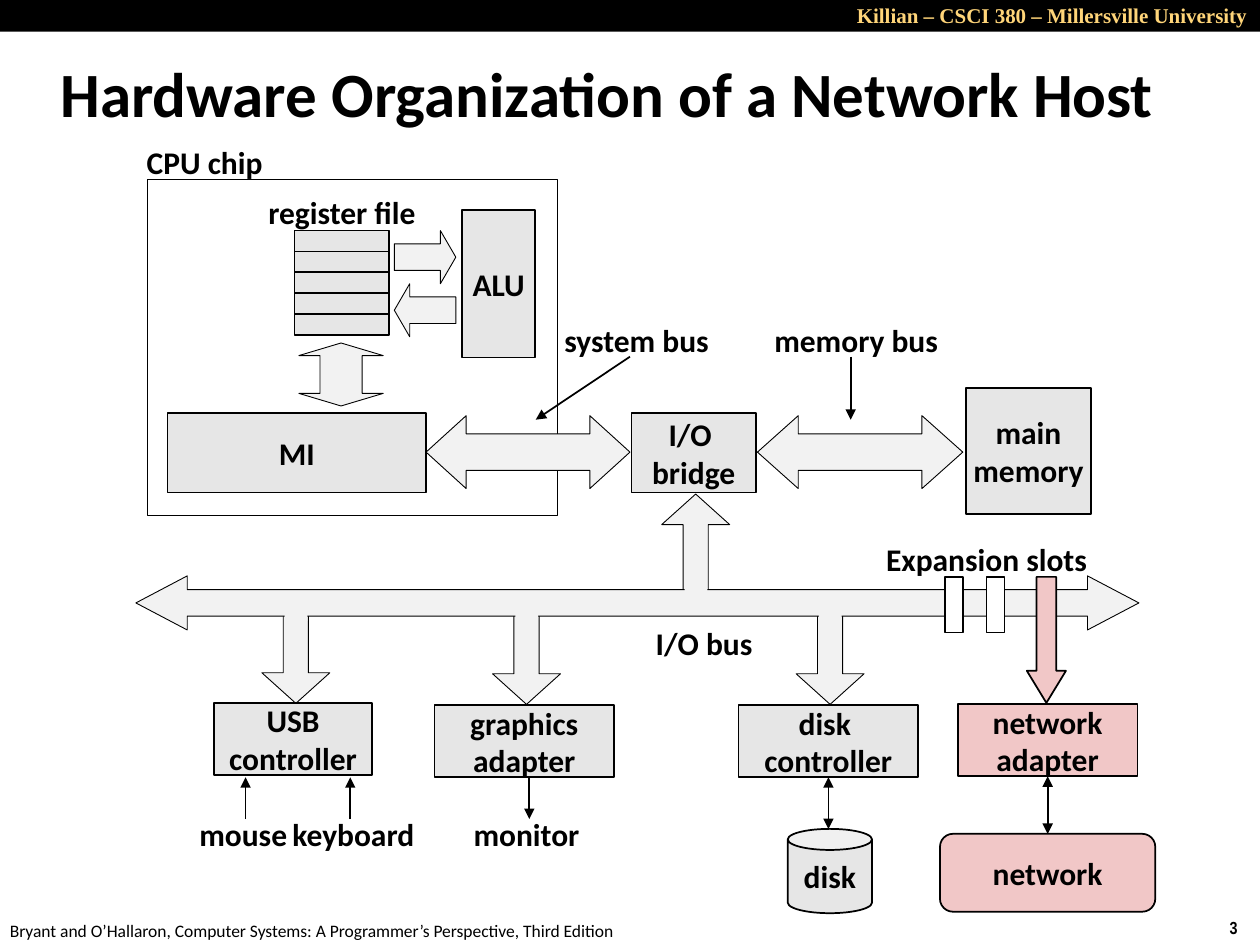
"""Build a slide that shows the hardware organization of a network host."""
from dataclasses import dataclass

from lxml import etree
from pptx import Presentation, util as u
from pptx.dml.color import RGBColor
from pptx.enum import shapes, text
from pptx.oxml.ns import qn


@dataclass(frozen=True)
class Theme:
    black: str = "000000"
    white: str = "FFFFFF"
    gold: str = "FFD579"
    box: str = "E6E6E6"
    bus: str = "F2F2F2"
    network: str = "F1C7C7"
    font: str = "Calibri"
    title: int = 36
    body: int = 18
    header: int = 12
    small: int = 10
    thin: float = 0.5
    solid: float = 1


theme = Theme()
kinds = shapes.MSO_SHAPE
presentation = Presentation()
presentation.slide_width, presentation.slide_height = u.Cm(25.4), u.Cm(19.05)
slide = presentation.slides.add_slide(presentation.slide_layouts[6])


def add_text(words, shape=None, place=None, size=theme.body, font=theme.font, color=theme.black,
             bold=True, align="CENTER", anchor="MIDDLE", wrap=False):
    shape = shape or slide.shapes.add_textbox(*map(u.Cm, place))
    frame = shape.text_frame
    frame.word_wrap = wrap
    frame.vertical_anchor = text.MSO_ANCHOR[anchor]
    frame.text = words
    for paragraph in frame.paragraphs:
        paragraph.alignment = text.PP_ALIGN[align]
        for run in paragraph.runs:
            run.font.name, run.font.size, run.font.bold = font, u.Pt(size), bold
            run.font.color.rgb = RGBColor.from_string(color)


def add_shape(kind, place, fill=None, line=theme.solid, adjustments=(), rotation=0):
    shape = slide.shapes.add_shape(kind, *map(u.Cm, place))
    shape.shadow.inherit = False
    shape.rotation = rotation
    if fill:
        shape.fill.solid()
        shape.fill.fore_color.rgb = RGBColor.from_string(fill)
    else:
        shape.fill.background()
    if line:
        shape.line.width = u.Pt(line)
        shape.line.color.rgb = RGBColor.from_string(theme.black)
    else:
        shape.line.fill.background()
    for index, value in enumerate(adjustments):
        shape.adjustments[index] = value
    return shape


add_shape(kinds.RECTANGLE, (0, 0, 25.4, 0.64), theme.black, None)
add_text("Killian – CSCI 380 – Millersville University", place=(11.43, -0.08, 13.97, 0.76),
         size=theme.header, font="Times New Roman", color=theme.gold, align="RIGHT",
         anchor="TOP", wrap=True)
add_text("3", place=(24.54, 18.36, 0.86, 0.69), size=theme.small, font="Arial Narrow",
         align="LEFT", anchor="TOP")
add_text("Bryant and O’Hallaron, Computer Systems: A Programmer’s Perspective, Third Edition",
         place=(-0.05, 18.42, 12.9, 0.69), size=theme.small, bold=False, align="LEFT", anchor="TOP")
add_text("Hardware Organization of a Network Host", place=(0.97, 0.79, 24.21, 2.16),
         size=theme.title, align="LEFT", wrap=True)

add_shape(kinds.RECTANGLE, (2.97, 3.61, 8.26, 6.78), line=0.25)
for row in range(5):
    add_shape(kinds.RECTANGLE, (5.94, 4.65 + row * 0.42, 1.9, 0.42), theme.box)

vertical_arrows = [
    (kinds.UP_ARROW, 13.34, 9.96, 2.11, 11.86),
    (kinds.DOWN_ARROW, 5.28, 12.17, 2.01, 12.09),
    (kinds.DOWN_ARROW, 9.93, 12.22, 1.98, 12.04),
    (kinds.DOWN_ARROW, 16.05, 12.22, 1.98, 12.01),
]
for kind, left, top, height, joint_top in vertical_arrows:
    add_shape(kind, (left, top, 1.37, height), theme.bus, theme.thin, (0.37, 0.45))

bus_arrows = [
    (kinds.RIGHT_ARROW, (7.95, 4.65, 1.24, 1.07), (0.5, 0.29), 0),
    (kinds.LEFT_ARROW, (7.95, 5.72, 1.24, 1.07), (0.5, 0.29), 0),
    (kinds.LEFT_RIGHT_ARROW, (6.24, 6.7, 1.27, 1.7), (0.5, 0.2), 90),
    (kinds.LEFT_RIGHT_ARROW, (8.59, 8.38, 4.11, 1.47), (0.5, 0.55), 0),
    (kinds.LEFT_RIGHT_ARROW, (15.27, 8.38, 4.14, 1.47), (0.5, 0.56), 0),
    (kinds.LEFT_RIGHT_ARROW, (2.74, 11.61, 20.22, 1.09), (0.49, 0.95), 0),
]
for kind, place, adjustments, rotation in bus_arrows:
    add_shape(kind, place, theme.bus, theme.thin, adjustments, rotation)
for kind, left, top, height, joint_top in vertical_arrows:
    add_shape(kinds.RECTANGLE, (left + 0.46, joint_top, 0.46, 0.43), theme.bus, None)

for slot_left in (19.05, 19.89):
    add_shape(kinds.RECTANGLE, (slot_left, 11.63, 0.36, 1.12), theme.white)
add_shape(kinds.DOWN_ARROW, (20.7, 11.63, 0.79, 2.54), theme.network, adjustments=(0.5, 0.82))

boxes = {}
for words, kind, place, fill in [
    ("ALU", kinds.RECTANGLE, (9.32, 4.24, 1.47, 2.97), theme.box),
    ("MI", kinds.RECTANGLE, (3.38, 8.33, 5.21, 1.6), theme.box),
    ("I/O \nbridge", kinds.RECTANGLE, (12.73, 8.33, 2.51, 1.6), theme.box),
    ("main\nmemory", kinds.RECTANGLE, (19.48, 7.82, 2.51, 2.54), theme.box),
    ("USB\ncontroller", kinds.RECTANGLE, (4.32, 14.17, 3.18, 1.45), theme.box),
    ("graphics\nadapter", kinds.RECTANGLE, (8.76, 14.22, 3.62, 1.45), theme.box),
    ("disk \ncontroller", kinds.RECTANGLE, (14.89, 14.22, 3.62, 1.45), theme.box),
    ("network\nadapter", kinds.RECTANGLE, (19.31, 14.2, 3.62, 1.45), theme.network),
    ("disk", kinds.CAN, (15.88, 16.71, 1.7, 1.7), theme.box),
    ("network", kinds.ROUNDED_RECTANGLE, (18.95, 16.81, 4.34, 1.57), theme.network),
]:
    boxes[words] = add_shape(kind, place, fill)
    add_text(words, boxes[words])

for words, left, top, width in [
    ("CPU chip", 2.69, 2.76, 2.87),
    ("register file", 5.14, 3.76, 3.51),
    ("system bus", 11.11, 6.35, 3.45),
    ("memory bus", 15.34, 6.35, 3.84),
    ("Expansion slots", 17.59, 10.76, 4.6),
    ("I/O bus", 12.95, 12.45, 2.49),
    ("mouse", 3.76, 16.31, 2.29),
    ("keyboard", 5.64, 16.31, 2.97),
    ("monitor", 9.28, 16.31, 2.67),
]:
    add_text(words, place=(left, top, width, 1.02))

for points, ends, source, target in [
    ((12.7, 7.19, 10.8, 8.46), ["tailEnd"], None, None),
    ((17.15, 7.19, 17.15, 8.46), ["tailEnd"], None, None),
    ((4.95, 16.51, 4.95, 15.67), ["tailEnd"], None, None),
    ((7.06, 16.51, 7.06, 15.67), ["tailEnd"], None, None),
    ((10.67, 15.67, 10.67, 16.51), ["tailEnd"], None, None),
    ((16.7, 15.67, 16.7, 16.71), ["headEnd", "tailEnd"], "disk \ncontroller", None),
    ((21.12, 15.65, 21.12, 16.81), ["headEnd", "tailEnd"], "network\nadapter", "network"),
]:
    connector = slide.shapes.add_connector(shapes.MSO_CONNECTOR.STRAIGHT, *map(u.Cm, points))
    connector.line.width = u.Pt(theme.solid)
    connector.line.color.rgb = RGBColor.from_string(theme.black)
    properties = connector._element.spPr
    for end in ends:
        etree.SubElement(properties.find(qn("a:ln")), qn(f"a:{end}"), type="triangle")
    etree.SubElement(properties, qn("a:effectLst"))
    if source:
        connector.begin_connect(boxes[source], 2)
    if target:
        connector.end_connect(boxes[target], 0)

presentation.save("out.pptx")
